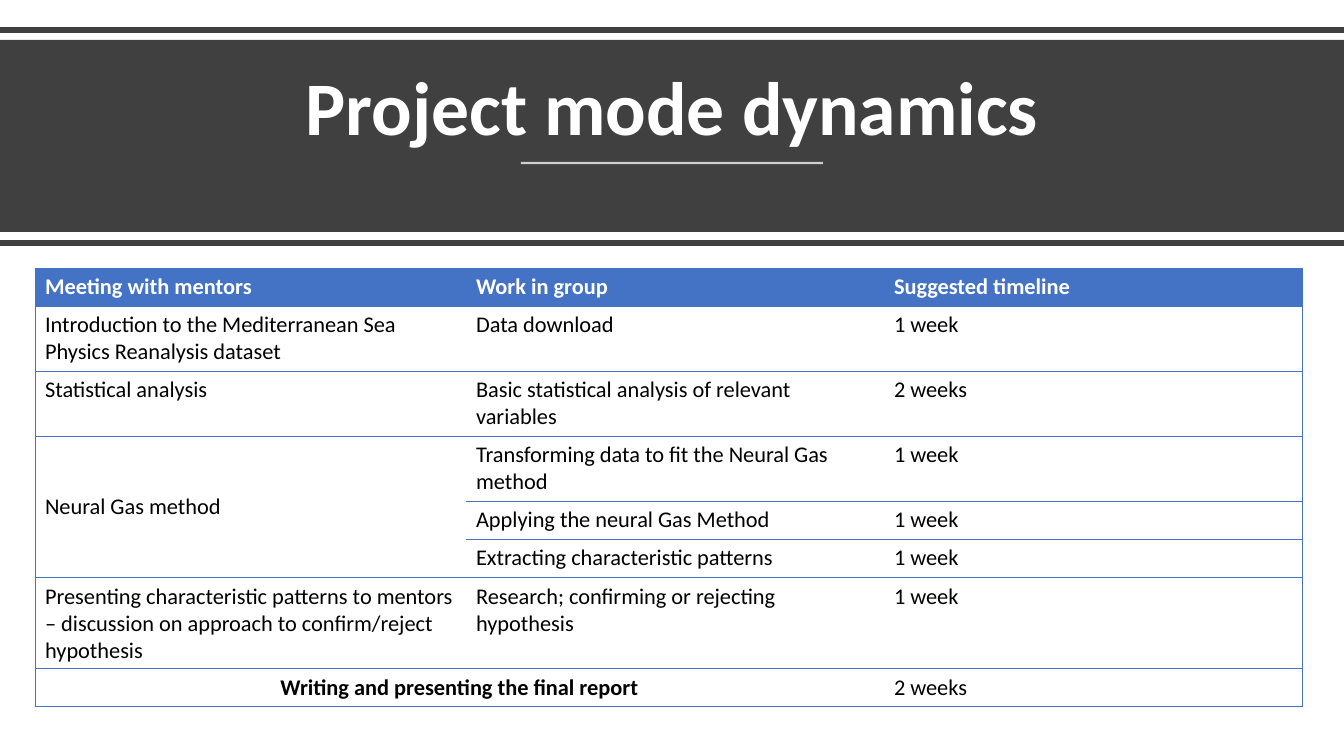
from dataclasses import dataclass

from lxml.etree import SubElement
from pptx import Presentation
from pptx.dml.color import RGBColor
from pptx.enum.shapes import MSO_CONNECTOR as Connector
from pptx.enum.shapes import MSO_SHAPE as Shape
from pptx.enum.text import MSO_ANCHOR as Anchor
from pptx.enum.text import PP_ALIGN as Align
from pptx.oxml.ns import qn
from pptx.util import Emu, Pt

SLIDE_W, SLIDE_H = 1344, 756
EMU_PER_PX = 12192000 / SLIDE_W
FONT = "Calibri"
CHARCOAL = RGBColor(0x40, 0x40, 0x40)
WHITE = RGBColor(0xFF, 0xFF, 0xFF)
BLACK = RGBColor(0x00, 0x00, 0x00)
BLUE = RGBColor(0x44, 0x72, 0xC4)


def px(length: int) -> Emu:
    return Emu(round(length * EMU_PER_PX))


@dataclass(frozen=True)
class Rule:
    left: int
    right: int
    y: int
    color: RGBColor
    points: float
    opacity: int = 100


@dataclass(frozen=True)
class Stage:
    height: int
    mentors: str
    group: str
    timeline: str


RULES = [
    Rule(0, SLIDE_W, 30, CHARCOAL, 4),
    Rule(521, 823, 163, WHITE, 1.5, 75),
    Rule(0, SLIDE_W, 243, CHARCOAL, 4),
]
COLUMN_WIDTHS = [431, 418, 418]
STAGES = [
    Stage(38, "Meeting with mentors", "Work in group", "Suggested timeline"),
    Stage(65, "Introduction to the Mediterranean Sea Physics Reanalysis dataset",
          "Data download", "1 week"),
    Stage(65, "Statistical analysis",
          "Basic statistical analysis of relevant variables", "2 weeks"),
    Stage(65, "Neural Gas method",
          "Transforming data to fit the Neural Gas method", "1 week"),
    Stage(38, "", "Applying the neural Gas Method", "1 week"),
    Stage(39, "", "Extracting characteristic patterns", "1 week"),
    Stage(91, "Presenting characteristic patterns to mentors – discussion on "
              "approach to confirm/reject hypothesis",
          "Research; confirming or rejecting hypothesis", "1 week"),
    Stage(38, "Writing and presenting the final report", "", "2 weeks"),
]
NEURAL_FIRST, NEURAL_LAST = 3, 5
REPORT = len(STAGES) - 1


def add_text(paragraph, text: str, size: int, color: RGBColor, bold: bool) -> None:
    run = paragraph.add_run()
    run.text = text
    run.font.name = FONT
    run.font.size = Pt(size)
    run.font.bold = bold
    run.font.color.rgb = color


def add_rule(slide, rule: Rule) -> None:
    line = slide.shapes.add_connector(
        Connector.STRAIGHT, px(rule.left), px(rule.y), px(rule.right), px(rule.y))
    line.line.color.rgb = rule.color
    line.line.width = Pt(rule.points)
    properties = line._element.spPr
    if rule.opacity < 100:
        color = properties.find(".//" + qn("a:srgbClr"))
        SubElement(color, qn("a:alpha"), val=str(rule.opacity * 1000))
    SubElement(properties, qn("a:effectLst"))


def add_border(cell, side: str, visible: bool) -> None:
    border = SubElement(cell._tc.get_or_add_tcPr(), qn("a:ln" + side), w=str(Pt(0.5)))
    if visible:
        fill = SubElement(border, qn("a:solidFill"))
        SubElement(fill, qn("a:srgbClr"), val=str(BLUE))
    else:
        SubElement(border, qn("a:noFill"))


def add_title_band(slide) -> None:
    band = slide.shapes.add_shape(Shape.RECTANGLE, 0, px(40), px(SLIDE_W), px(192))
    band.shadow.inherit = False
    band.fill.solid()
    band.fill.fore_color.rgb = CHARCOAL
    band.line.fill.background()

    title = slide.shapes.add_textbox(px(58), px(54), px(1228), px(103)).text_frame
    title.word_wrap = True
    title.vertical_anchor = Anchor.BOTTOM
    heading = title.paragraphs[0]
    heading.alignment = Align.CENTER
    heading.line_spacing = 0.9
    add_text(heading, "Project mode dynamics", 54, WHITE, True)


def add_schedule(slide) -> None:
    schedule = slide.shapes.add_table(
        len(STAGES), len(COLUMN_WIDTHS), px(35), px(268),
        px(sum(COLUMN_WIDTHS)), px(sum(stage.height for stage in STAGES))).table
    schedule.horz_banding = False
    for column, width in zip(schedule.columns, COLUMN_WIDTHS):
        column.width = px(width)

    # Merged cells
    schedule.cell(NEURAL_FIRST, 0).merge(schedule.cell(NEURAL_LAST, 0))
    schedule.cell(NEURAL_FIRST, 0).vertical_anchor = Anchor.MIDDLE
    schedule.cell(REPORT, 0).merge(schedule.cell(REPORT, 1))
    schedule.cell(REPORT, 0).text_frame.paragraphs[0].alignment = Align.CENTER

    for row, stage in enumerate(STAGES):
        schedule.rows[row].height = px(stage.height)
        for col, text in enumerate((stage.mentors, stage.group, stage.timeline)):
            cell = schedule.cell(row, col)
            in_neural = col == 0 and NEURAL_FIRST < row <= NEURAL_LAST
            add_border(cell, "L", col == 0)
            add_border(cell, "R", col == len(COLUMN_WIDTHS) - 1)
            add_border(cell, "T", not in_neural)
            add_border(cell, "B", not in_neural or row == NEURAL_LAST)
            if row == 0:
                cell.fill.solid()
                cell.fill.fore_color.rgb = BLUE
            else:
                cell.fill.background()
            if text:
                bold = row == 0 or (row == REPORT and col == 0)
                add_text(cell.text_frame.paragraphs[0], text, 16,
                         WHITE if row == 0 else BLACK, bold)


def main() -> None:
    deck = Presentation()
    deck.slide_width, deck.slide_height = px(SLIDE_W), px(SLIDE_H)
    slide = deck.slides.add_slide(deck.slide_layouts[6])
    add_title_band(slide)
    for rule in RULES:
        add_rule(slide, rule)
    add_schedule(slide)
    deck.save("out.pptx")


if __name__ == "__main__":
    main()
